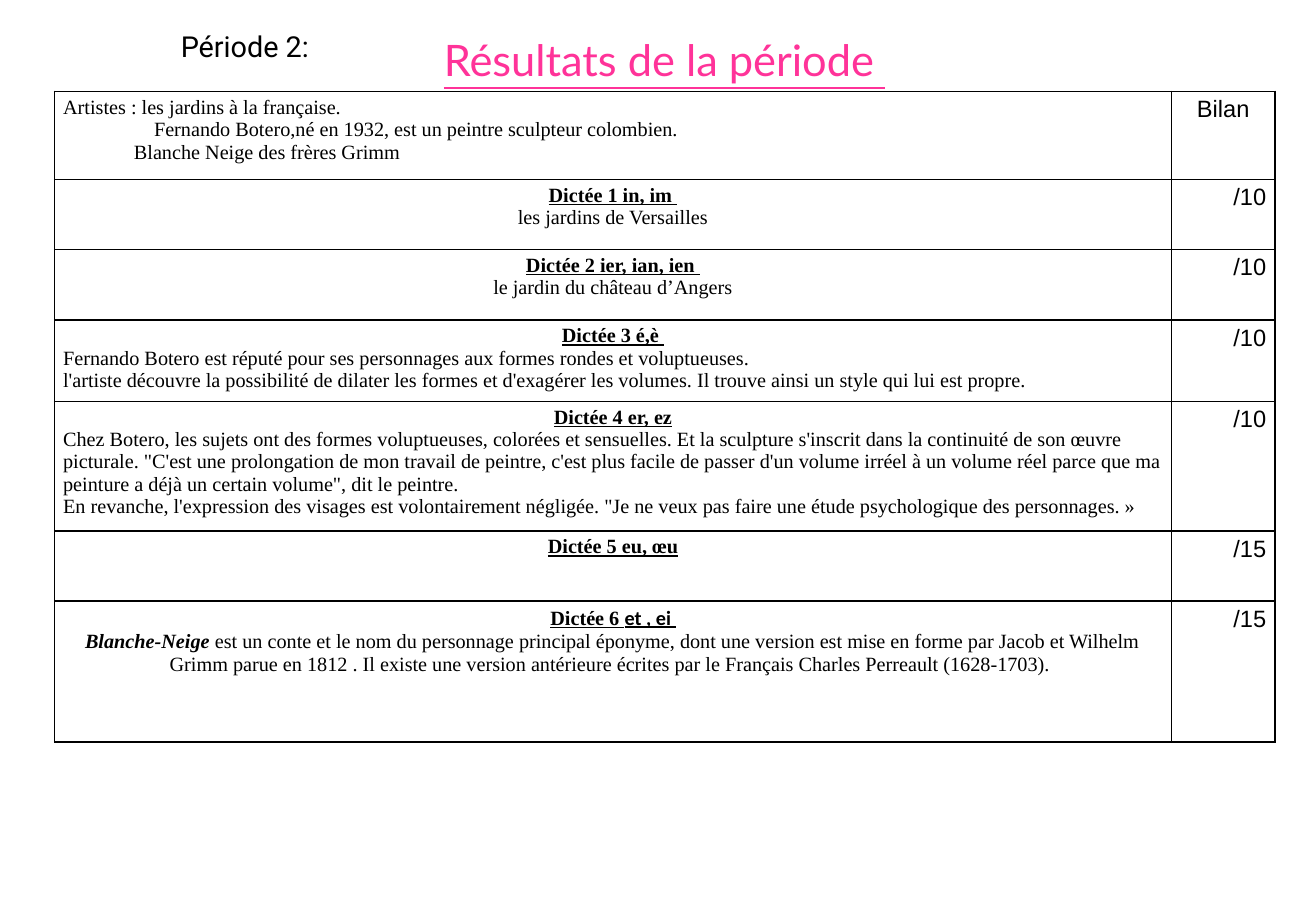
"""Build the slide of dictation results for the second school period."""
import pptx
import pptx.util
import pptx.dml.color
import pptx.enum.text
import pptx.oxml
from pptx.util import Cm

ALIGN = pptx.enum.text.PP_ALIGN
LEFT, CENTER, RIGHT = ALIGN.LEFT, ALIGN.CENTER, ALIGN.RIGHT
BLACK, PINK = "000000", "FF3399"
SERIF = "Times New Roman"


def rgb(hex_code):
    return pptx.dml.color.RGBColor.from_string(hex_code)


def add_run(paragraph, text, font_name, size, color=BLACK, style=""):
    run = paragraph.add_run()
    run.text = text
    run.font.name = font_name
    run.font.size = pptx.util.Pt(size)
    run.font.color.rgb = rgb(color)
    run.font.bold = "b" in style
    run.font.italic = "i" in style
    run.font.underline = "u" in style


deck = pptx.Presentation()
deck.slide_width, deck.slide_height = Cm(27.51), Cm(19.05)
slide = deck.slides.add_slide(deck.slide_layouts[5])

heading = slide.shapes.title
heading.left, heading.top, heading.width, heading.height = Cm(5.05), Cm(0.56), Cm(17.68), Cm(1.35)
heading_line = heading.text_frame.paragraphs[0]
heading_line.alignment = CENTER
add_run(heading_line, "Résultats de la période ", "Lato", 25.7, PINK, "u")

# Each row: height, score, then paragraphs as (alignment, indent, runs of text, style, font)
results = [
    (1.84, "Bilan", [
        (LEFT, 0, [("Artistes : les jardins à la française.", "", SERIF)]),
        (LEFT, 1.9, [("Fernando Botero,né en 1932, est un peintre sculpteur colombien.", "", SERIF)]),
        (LEFT, 1.48, [("Blanche Neige des frères Grimm", "", SERIF)]),
    ]),
    (1.47, "/10", [
        (CENTER, 0, [("Dictée 1 in, im ", "bu", SERIF)]),
        (CENTER, 0, [("les jardins de Versailles", "", SERIF)]),
    ]),
    (1.47, "/10", [
        (CENTER, 0, [("Dictée 2 ier, ian, ien ", "bu", SERIF)]),
        (CENTER, 0, [("le jardin du château d’Angers", "", SERIF)]),
    ]),
    (1.7, "/10", [
        (CENTER, 0, [("Dictée 3 é,è ", "bu", SERIF)]),
        (LEFT, 0, [("Fernando Botero est réputé pour ses personnages aux formes rondes et "
                    "voluptueuses.", "", SERIF)]),
        (LEFT, 0, [("l'artiste découvre la possibilité de dilater les formes et d'exagérer les "
                    "volumes. Il trouve ainsi un style qui lui est propre.", "", SERIF)]),
    ]),
    (2.71, "/10", [
        (CENTER, 0, [("Dictée 4 er, ez", "bu", SERIF)]),
        (LEFT, 0, [("Chez Botero, les sujets ont des formes voluptueuses, colorées et sensuelles. "
                    "Et la sculpture s'inscrit dans la continuité de son œuvre picturale. "
                    "\"C'est une prolongation de mon travail de peintre, c'est plus facile de "
                    "passer d'un volume irréel à un volume réel parce que ma peinture a déjà un "
                    "certain volume\", dit le peintre.", "", SERIF)]),
        (LEFT, 0, [("En revanche, l'expression des visages est volontairement négligée. \"Je ne "
                    "veux pas faire une étude psychologique des personnages. »", "", SERIF)]),
    ]),
    (1.47, "/15", [(CENTER, 0, [("Dictée 5 eu, œu", "bu", SERIF)])]),
    (2.95, "/15", [
        (CENTER, 0, [("Dictée 6 ", "bu", SERIF), ("et , ei ", "bu", "Calibri")]),
        (CENTER, 0, [("Blanche-Neige", "bi", SERIF),
                     (" est un conte et le nom du personnage principal éponyme, dont une version "
                      "est mise en forme par Jacob et Wilhelm Grimm parue en 1812 . Il existe une "
                      "version antérieure écrites par le Français Charles Perreault "
                      "(1628-1703). ", "", SERIF)]),
    ]),
]

results_height = sum(height for height, score, dictation in results)
grid = slide.shapes.add_table(len(results), 2, Cm(1.14), Cm(1.91), Cm(25.51), Cm(results_height)).table
grid.first_row = grid.horz_banding = False
grid.columns[0].width, grid.columns[1].width = Cm(23.35), Cm(2.16)

for row, (height, score, dictation) in zip(grid.rows, results):
    row.height = Cm(height)
    score_align = CENTER if score == "Bilan" else RIGHT
    dictation_cell, score_cell = row.cells
    for cell in (dictation_cell, score_cell):
        cell.margin_left = cell.margin_right = Cm(0.18)
        cell.margin_top = cell.margin_bottom = Cm(0.1)
        for side in ("lnL", "lnR", "lnT", "lnB"):
            cell._tc.get_or_add_tcPr().append(pptx.oxml.parse_xml(
                f'<a:{side} xmlns:a="http://schemas.openxmlformats.org/drawingml/2006/main" w="12700">'
                f'<a:solidFill><a:srgbClr val="{BLACK}"/></a:solidFill></a:{side}>'))
        cell.fill.background()
    for index, (alignment, indent, pieces) in enumerate(dictation):
        frame = dictation_cell.text_frame
        paragraph = frame.add_paragraph() if index else frame.paragraphs[0]
        paragraph.alignment = alignment
        paragraph._p.get_or_add_pPr().set("marL", str(Cm(indent)))
        for text, style, font_name in pieces:
            add_run(paragraph, text, font_name, 12, style=style)
    score_line = score_cell.text_frame.paragraphs[0]
    score_line.alignment = score_align
    add_run(score_line, score, "Arial", 14)

period = slide.shapes.add_textbox(Cm(3.53), Cm(0.48), Cm(5.79), Cm(0.99)).text_frame
period.word_wrap = True
add_run(period.paragraphs[0], "Période 2:", "Roboto", 17.1)

deck.save("out.pptx")
